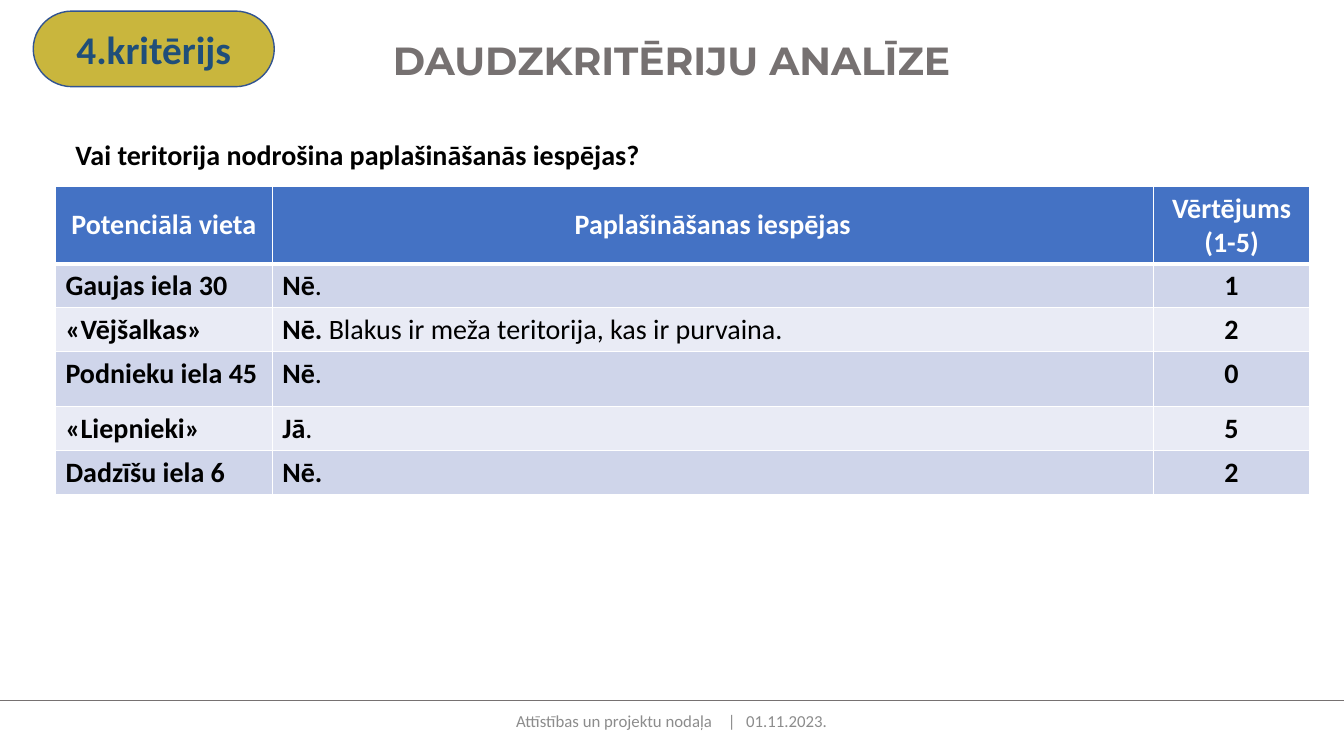
from lxml.etree import SubElement
from pptx import Presentation
from pptx.dml.color import RGBColor
from pptx.enum.shapes import MSO_CONNECTOR, MSO_SHAPE
from pptx.enum.text import MSO_ANCHOR, PP_ALIGN
from pptx.oxml.ns import qn
from pptx.util import Inches, Pt

HUES = {
    "white": "FFFFFF", "black": "000000", "grey": "767171", "pale": "8C8C8C",
    "head": "4472C4", "odd": "CFD5EA", "even": "E9EBF5",
    "gold": "C9B63D", "edge": "325491", "navy": "1F4E79",
}
HEADS = ["Potenciālā vieta", "Paplašināšanas iespējas", "Vērtējums (1-5)"]
# place, bold answer, plain remark, score
SITES = [
    ("Gaujas iela 30", "Nē", ".", "1"),
    ("«Vējšalkas»", "Nē. ", "Blakus ir meža teritorija, kas ir purvaina.", "2"),
    ("Podnieku iela 45", "Nē", ".", "0"),
    ("«Liepnieki»", "Jā", ".", "5"),
    ("Dadzīšu iela 6", "Nē.", "", "2"),
]
WIDTHS = [2.15, 8.74, 1.55]
HEIGHTS = [0.76, 0.43, 0.43, 0.55, 0.43, 0.43]


def hue(name):
    return RGBColor.from_string(HUES[name])


def write(frame, text, rest="", size=20, font="Calibri", color="black",
          bold=True, align=PP_ALIGN.LEFT, anchor=MSO_ANCHOR.TOP):
    """Fill the frame with text, then a plain-weight rest; return the paragraph."""
    frame.word_wrap = True
    frame.vertical_anchor = anchor
    para = frame.paragraphs[0]
    para.alignment = align
    for part, heavy in ((text, bold), (rest, False)):
        if part:
            run = para.add_run()
            run.text = part
            run.font.size = Pt(size)
            run.font.name = font
            run.font.bold = heavy
            run.font.color.rgb = hue(color)
    return para


def border(cell, base=1):
    """Draw white cell borders, with the bottom one base points wide."""
    props = cell._tc.get_or_add_tcPr()
    for side, width in (("L", 1), ("R", 1), ("T", 1), ("B", base)):
        line = SubElement(props, qn("a:ln" + side), w=str(Pt(width)))
        fill = SubElement(line, qn("a:solidFill"))
        SubElement(fill, qn("a:srgbClr"), val=HUES["white"])


class Deck:
    def __init__(self):
        self.show = Presentation()
        self.show.slide_width = Inches(13.33)
        self.show.slide_height = Inches(7.5)
        self.slide = self.show.slides.add_slide(self.show.slide_layouts[6])
        self.shapes = self.slide.shapes

    def text(self, box, text, **style):
        frame = self.shapes.add_textbox(*map(Inches, box)).text_frame
        return frame, write(frame, text, **style)

    def rule(self, start, end):
        line = self.shapes.add_connector(
            MSO_CONNECTOR.STRAIGHT, *map(Inches, start + end))
        line.line.color.rgb = hue("grey")
        line.line.width = Pt(0.5)
        SubElement(line._element.spPr, qn("a:effectLst"))

    def badge(self, box, text, **style):
        shape = self.shapes.add_shape(
            MSO_SHAPE.FLOWCHART_TERMINATOR, *map(Inches, box))
        shape.shadow.inherit = False
        shape.fill.solid()
        shape.fill.fore_color.rgb = hue("gold")
        shape.line.color.rgb = hue("edge")
        shape.line.width = Pt(1)
        write(shape.text_frame, text, **style)

    def cell(self, cell, fill, text, base=1, **style):
        border(cell, base)
        cell.fill.solid()
        cell.fill.fore_color.rgb = hue(fill)
        write(cell.text_frame, text, **style)
        cell.vertical_anchor = style.get("anchor", MSO_ANCHOR.TOP)

    def table(self, left, top):
        grid = self.shapes.add_table(
            len(HEIGHTS), len(WIDTHS), Inches(left), Inches(top),
            Inches(sum(WIDTHS)), Inches(sum(HEIGHTS))).table
        grid.horz_banding = False
        for col, width in zip(grid.columns, WIDTHS):
            col.width = Inches(width)
        for row, height in zip(grid.rows, HEIGHTS):
            row.height = Inches(height)
        for col, head in enumerate(HEADS):
            self.cell(grid.cell(0, col), "head", head, base=3, color="white",
                      align=PP_ALIGN.CENTER, anchor=MSO_ANCHOR.MIDDLE)
        for row, (place, answer, remark, score) in enumerate(SITES, 1):
            fill = "odd" if row % 2 else "even"
            self.cell(grid.cell(row, 0), fill, place)
            self.cell(grid.cell(row, 1), fill, answer, rest=remark)
            self.cell(grid.cell(row, 2), fill, score, align=PP_ALIGN.CENTER)

    def footer(self, box, text, inset, stops):
        """Write a footer whose parts line up on tab stops."""
        frame, para = self.text(box, text, size=12, color="pale", bold=False,
                                anchor=MSO_ANCHOR.MIDDLE)
        frame.margin_left = Inches(inset)
        tabs = SubElement(para._p.get_or_add_pPr(), qn("a:tabLst"))
        for stop in stops:
            SubElement(tabs, qn("a:tab"), pos=str(Inches(stop)), algn="l")


def main():
    deck = Deck()
    deck.footer((4.42, 6.95, 4.5, 0.4),
                "Attīstības un projektu nodaļa\t|\t01.11.2023.",
                inset=0.7, stops=(2.1, 2.28))
    deck.rule((0, 6.95), (13.33, 6.95))
    deck.text((0.44, 0.31, 12.44, 0.57), "DAUDZKRITĒRIJU ANALĪZE", size=28,
              font="Montserrat", color="grey", align=PP_ALIGN.CENTER)
    para = deck.text((0.65, 1.35, 12.24, 1.04),
                     "Vai teritorija nodrošina paplašināšanās iespējas?")[1]
    para.line_spacing = 0.9
    para.space_before = Pt(10)
    deck.table(0.55, 1.85)
    deck.badge((0.33, 0.11, 2.39, 0.75), "4.kritērijs", size=28, color="navy",
               align=PP_ALIGN.CENTER, anchor=MSO_ANCHOR.MIDDLE)
    deck.show.save("out.pptx")


if __name__ == "__main__":
    main()
